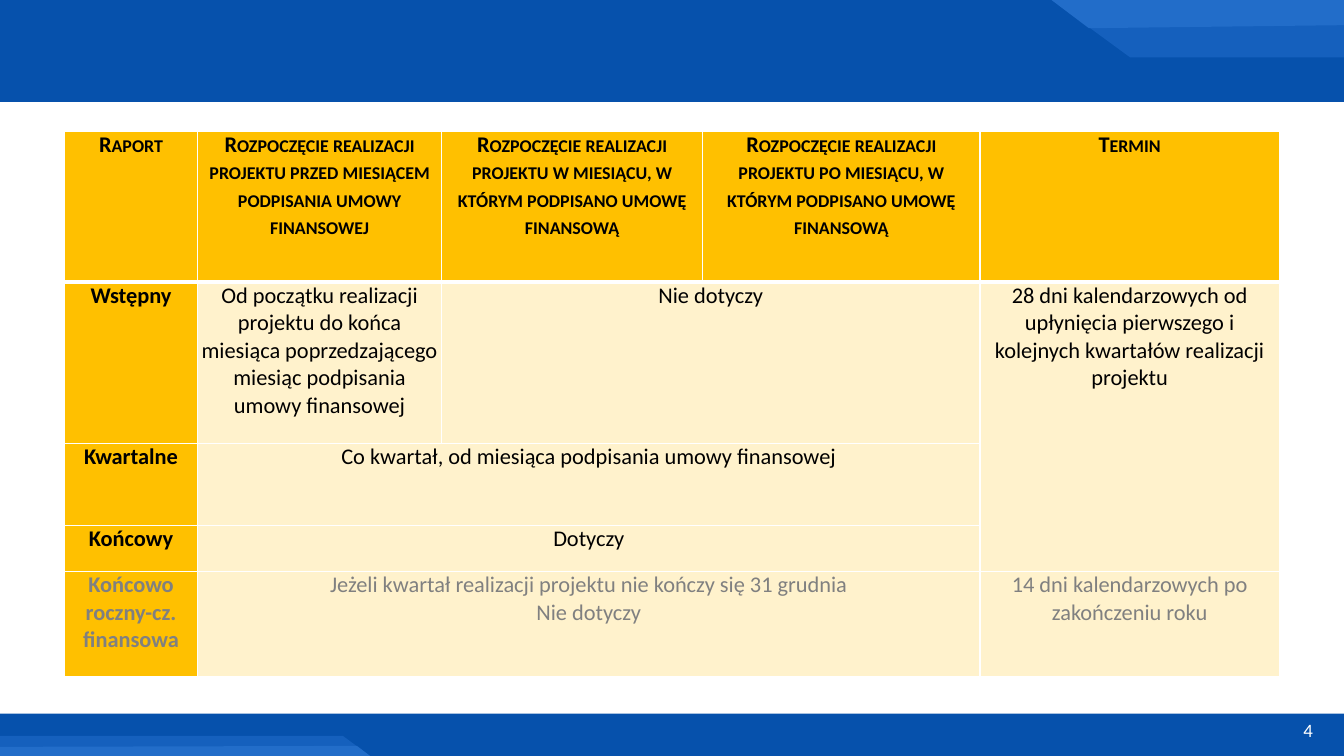
import pptx
import pptx.util
import pptx.dml.color
import pptx.enum.shapes
import pptx.enum.text
import pptx.oxml
import pptx.oxml.ns

Inches = pptx.util.Inches
Pt = pptx.util.Pt
ALIGN = pptx.enum.text.PP_ALIGN

COLORS = {
    "band": "0651AC", "middle": "1560BD", "light": "226DC9", "gold": "FFC000",
    "cream": "FFF2CC", "white": "FFFFFF", "black": "000000", "gray": "808080",
}
BANDS = [(-0.03, 1.04), (7.08, 0.42)]
ACCENTS = [
    ("middle", [(13.33, -0.03), (10.39, -0.03), (11.21, 0.57), (13.33, 0.57)]),
    ("light", [(13.33, -0.03), (10.39, -0.03), (10.8, 0.28), (13.33, 0.25)]),
    ("middle", [(0, 7.5), (3.67, 7.5), (3.4, 7.3), (0, 7.3)]),
    ("light", [(0, 7.5), (3.67, 7.5), (3.54, 7.4), (-0.01, 7.41)]),
]
COLUMN_WIDTHS = [1.32, 2.42, 2.59, 2.75, 2.97]
ROW_HEIGHTS = [1.5, 1.6, 0.81, 0.46, 1.04]
ROWS = [
    ["Raport",
     "Rozpoczęcie realizacji projektu przed miesiącem podpisania umowy finansowej",
     "Rozpoczęcie realizacji projektu w miesiącu, w którym podpisano umowę finansową",
     "Rozpoczęcie realizacji projektu po miesiącu, w którym podpisano umowę finansową",
     "Termin"],
    ["Wstępny",
     "Od początku realizacji projektu do końca miesiąca poprzedzającego\n"
     "miesiąc podpisania umowy finansowej",
     "Nie dotyczy", None,
     "28 dni kalendarzowych od upłynięcia pierwszego i kolejnych kwartałów "
     "realizacji projektu"],
    ["Kwartalne", "Co kwartał, od miesiąca podpisania umowy finansowej", None, None, None],
    ["Końcowy", "Dotyczy", None, None, None],
    ["Końcowo\nroczny-cz. finansowa",
     "Jeżeli kwartał realizacji projektu nie kończy się 31 grudnia\nNie dotyczy",
     None, None, "14 dni kalendarzowych po zakończeniu roku"],
]
MERGES = [((1, 2), (1, 3)), ((1, 4), (3, 4)), ((2, 1), (2, 3)),
          ((3, 1), (3, 3)), ((4, 1), (4, 3))]


def rgb(name):
    return pptx.dml.color.RGBColor.from_string(COLORS[name])


def paint(shape, color):
    shape.shadow.inherit = False
    shape.fill.solid()
    shape.fill.fore_color.rgb = rgb(color)
    shape.line.fill.background()


def write(frame, text, size=16, color="black", bold=False, small=False, align=ALIGN.CENTER):
    frame.word_wrap = True
    for index, line in enumerate(text.split("\n")):
        para = frame.add_paragraph() if index else frame.paragraphs[0]
        para.alignment = align
        span = para.add_run()
        span.text = line
        span.font.name = "Calibri"
        span.font.size = Pt(size)
        span.font.bold = bold
        span.font.color.rgb = rgb(color)
        if small:
            span.font._element.set("cap", "small")


def set_borders(cell, row):
    widths = {"lnL": 1, "lnR": 1, "lnT": 3 if row == 1 else 1, "lnB": 3 if row == 0 else 1}
    properties = cell._tc.get_or_add_tcPr()
    for side, width in widths.items():
        properties.append(pptx.oxml.parse_xml(
            f'<a:{side} {pptx.oxml.ns.nsdecls("a")} w="{Pt(width)}"><a:solidFill>'
            f'<a:srgbClr val="{COLORS["white"]}"/></a:solidFill></a:{side}>'))


def add_background(page):
    for (top, height), accents in zip(BANDS, (ACCENTS[:2], ACCENTS[2:])):
        band = page.shapes.add_shape(
            pptx.enum.shapes.MSO_SHAPE.RECTANGLE,
            0, Inches(top), Inches(13.33), Inches(height))
        paint(band, "band")
        for color, corners in accents:
            points = [(Inches(x), Inches(y)) for x, y in corners]
            builder = page.shapes.build_freeform(*points[0])
            builder.add_line_segments(points[1:], close=True)
            paint(builder.convert_to_shape(), color)


def add_report_table(page):
    frame = page.shapes.add_table(
        len(ROWS), len(COLUMN_WIDTHS), Inches(0.64), Inches(1.3),
        Inches(sum(COLUMN_WIDTHS)), Inches(sum(ROW_HEIGHTS)))
    table = frame.table
    table.first_row = table.horz_banding = False
    for column, width in zip(table.columns, COLUMN_WIDTHS):
        column.width = Inches(width)
    for table_row, height in zip(table.rows, ROW_HEIGHTS):
        table_row.height = Inches(height)
    for start, end in MERGES:
        table.cell(*start).merge(table.cell(*end))
    for row, texts in enumerate(ROWS):
        for column, text in enumerate(texts):
            cell = table.cell(row, column)
            heading = row == 0 or column == 0
            cell.margin_left = cell.margin_right = Inches(0.04)
            cell.margin_top = cell.margin_bottom = 0
            set_borders(cell, row)
            cell.fill.solid()
            cell.fill.fore_color.rgb = rgb("gold" if heading else "cream")
            if text:
                write(cell.text_frame, text, bold=heading, small=row == 0,
                      color="gray" if row == len(ROWS) - 1 else "black")


def main():
    deck = pptx.Presentation()
    deck.slide_width, deck.slide_height = Inches(13.33), Inches(7.5)
    page = deck.slides.add_slide(deck.slide_layouts[6])
    add_background(page)
    number = page.shapes.add_textbox(Inches(12.18), Inches(7.08), Inches(0.94), Inches(0.33))
    write(number.text_frame, "4", size=13.5, color="white", align=ALIGN.RIGHT)
    add_report_table(page)
    deck.save("out.pptx")


if __name__ == "__main__":
    main()
